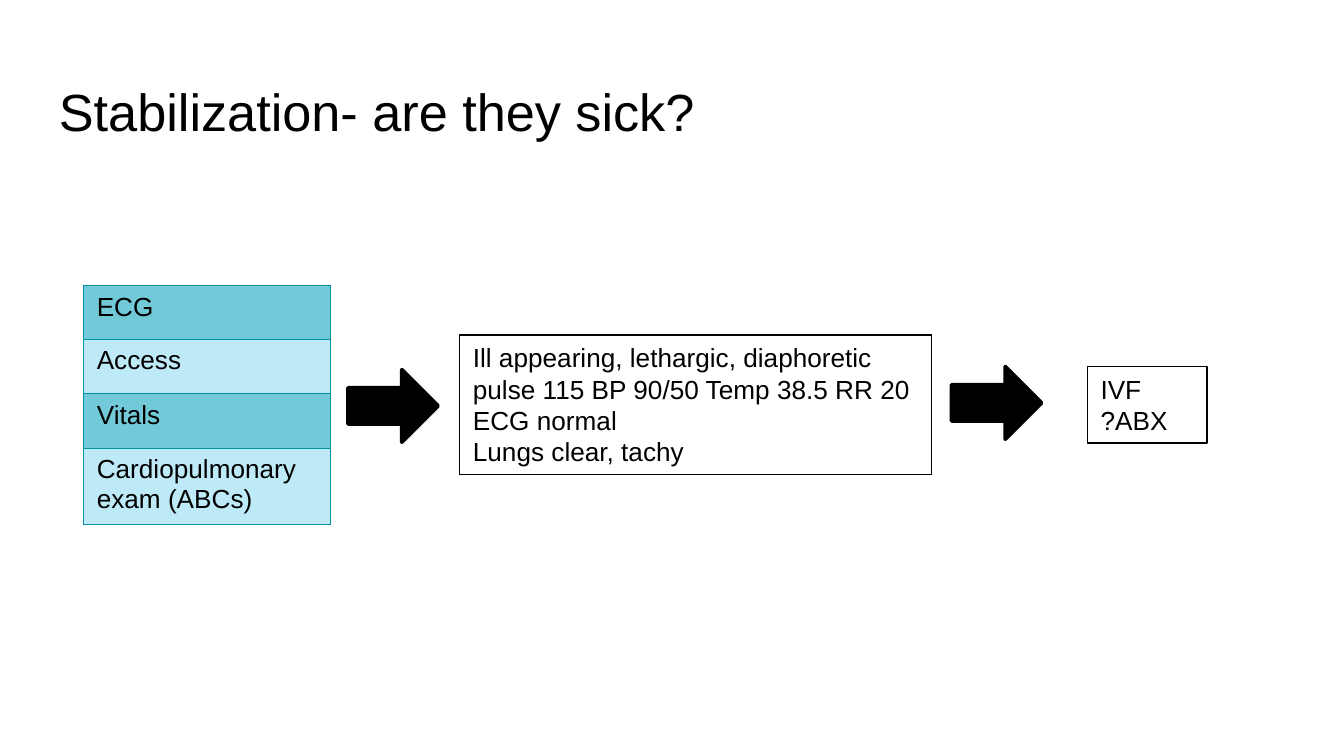
from lxml.etree import SubElement
from pptx import Presentation
from pptx.dml.color import RGBColor
from pptx.enum.shapes import MSO_SHAPE
from pptx.enum.text import MSO_ANCHOR, PP_ALIGN
from pptx.oxml.ns import qn
from pptx.util import Inches, Pt

WIDE = Inches(10)
HIGH = WIDE * 9 // 16
HUES = {"ink": "000000", "teal": "72C9D7", "pale": "BEEAF7", "edge": "0094A3"}


def hue(name):
    """Return a named colour."""
    return RGBColor.from_string(HUES[name])


def place(box):
    """Turn a box on a grid of 100 columns and 100 rows into lengths."""
    return [int(part * side / 100) for part, side in zip(box, (WIDE, HIGH) * 2)]


def write(frame, lines, size):
    """Write one left-aligned paragraph per line."""
    for i, line in enumerate(lines):
        para = frame.paragraphs[0] if i == 0 else frame.add_paragraph()
        para.alignment = PP_ALIGN.LEFT
        run = para.add_run()
        run.text = line
        run.font.name, run.font.size = "Arial", Pt(size)
        run.font.color.rgb = hue("ink")


def add_title(slide, box, text):
    """Place the heading in its box."""
    frame = slide.shapes.add_textbox(*place(box)).text_frame
    frame.word_wrap = True
    frame.margin_top = frame.margin_bottom = Inches(0.1)
    write(frame, [text], 28)


def add_edges(cell):
    """Outline all four sides of a cell."""
    props = cell._tc.get_or_add_tcPr()
    for i, side in enumerate(("lnL", "lnR", "lnT", "lnB")):
        line = props.makeelement(qn(f"a:{side}"), {"w": str(Pt(0.75))})
        props.insert(i, line)
        fill = SubElement(line, qn("a:solidFill"))
        SubElement(fill, qn("a:srgbClr"), val=HUES["edge"])


def add_steps(slide, box, steps, rows):
    """Place the banded one-column table of steps."""
    holder = slide.shapes.add_table(len(steps), 1, *place(box))
    grid = holder.table
    grid.first_row = grid.horz_banding = False
    for i, (step, high) in enumerate(zip(steps, rows)):
        grid.rows[i].height = int(HIGH * high / 100)
        cell = grid.cell(i, 0)
        cell.fill.solid()
        cell.fill.fore_color.rgb = hue("pale" if i % 2 else "teal")
        add_edges(cell)
        write(cell.text_frame, [step], 14)
    holder.height = place(box)[3]


def add_shape(slide, kind, box, width):
    """Place a flat shape with a dark outline."""
    shape = slide.shapes.add_shape(kind, *place(box))
    shape.shadow.inherit = False
    shape.line.color.rgb = hue("ink")
    shape.line.width = Pt(width)
    return shape


def add_arrow(slide, box):
    """Place a solid block arrow."""
    arrow = add_shape(slide, MSO_SHAPE.RIGHT_ARROW, box, 2)
    arrow.fill.solid()
    arrow.fill.fore_color.rgb = hue("ink")


def add_note(slide, box, lines, wrap=True):
    """Place an outlined box of text."""
    note = add_shape(slide, MSO_SHAPE.RECTANGLE, box, 0.75)
    note.fill.background()
    frame = note.text_frame
    frame.word_wrap = wrap
    frame.vertical_anchor = MSO_ANCHOR.TOP
    write(frame, lines, 14)


def main():
    """Build the slide and save it."""
    deck = Presentation()
    deck.slide_width, deck.slide_height = WIDE, HIGH
    slide = deck.slides.add_slide(deck.slide_layouts[6])
    add_title(slide, (3.4, 8.7, 93.2, 11.2), "Stabilization- are they sick?")
    steps = ["ECG", "Access", "Vitals", "Cardiopulmonary exam (ABCs)"]
    add_steps(slide, (6.2, 37.8, 18.4, 31.6), steps, (7.1, 7.2, 7.2, 7.2))
    add_arrow(slide, (25.9, 48.9, 6.7, 9.6))
    findings = [
        "Ill appearing, lethargic, diaphoretic",
        "pulse 115 BP 90/50 Temp 38.5 RR 20",
        "ECG normal",
        "Lungs clear, tachy",
    ]
    add_note(slide, (34.2, 44.3, 35.1, 18.5), findings, False)
    add_arrow(slide, (70.8, 48.5, 6.7, 9.6))
    add_note(slide, (80.9, 48.5, 8.9, 10.1), ["IVF", "?ABX"])
    deck.save("out.pptx")


if __name__ == "__main__":
    main()
